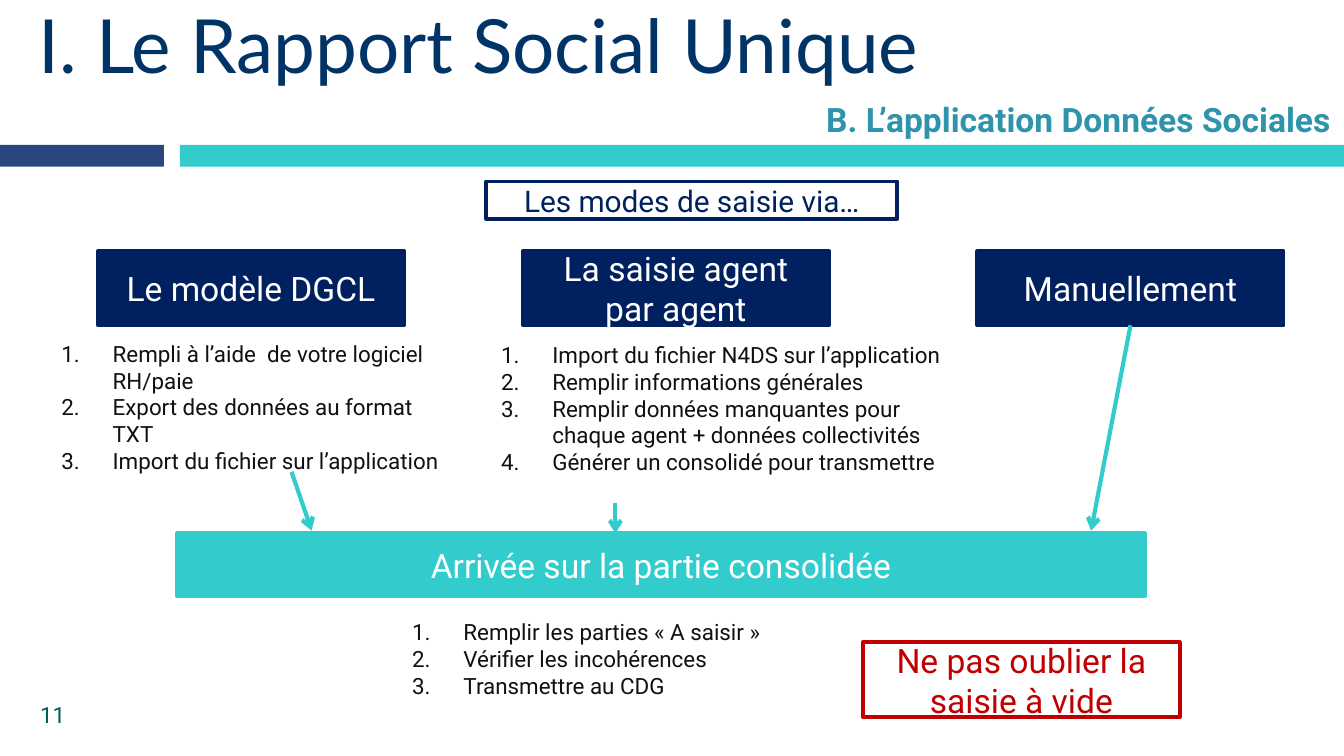
from lxml.etree import SubElement
from pptx import Presentation
from pptx.dml.color import RGBColor
from pptx.enum.shapes import MSO_CONNECTOR as Connector, MSO_SHAPE as Shape
from pptx.enum.text import MSO_ANCHOR as Anchor, MSO_AUTO_SIZE as AutoSize, PP_ALIGN as Align
from pptx.oxml.ns import qn
from pptx.util import Cm, Pt

COLORS = {
    "navy": "002060", "turquoise": "33CCCC", "slate": "2A467E", "title": "003366",
    "subtitle": "2F93AB", "page": "005B59", "ink": "111111", "red": "C00000", "white": "FFFFFF",
}
LIST_INDENT = 0.97
TITLE_INDENT = 1.24


def color(name):
    return RGBColor.from_string(COLORS[name])


class SlideBuilder:
    def __init__(self, slide, font="Roboto"):
        self.slide = slide
        self.font = font

    def set_text(self, frame, lines, ink, size, align=Align.LEFT, anchor=Anchor.MIDDLE,
                 indent=0, numbered=False, grow=False, **font_format):
        """Fill a text frame; a numbered text hangs its numbers in the indent."""
        frame_format = {"word_wrap": True, "vertical_anchor": anchor,
                        "auto_size": AutoSize.SHAPE_TO_FIT_TEXT if grow else AutoSize.NONE}
        for name, value in frame_format.items():
            setattr(frame, name, value)
        for number, line in enumerate(lines):
            paragraph = frame.add_paragraph() if number else frame.paragraphs[0]
            paragraph.text = line
            paragraph.alignment = align
            properties = paragraph._p.get_or_add_pPr()
            properties.set("marL", str(Cm(indent)))
            if numbered:
                properties.set("indent", str(-Cm(indent)))
                SubElement(properties, qn("a:buFont"), typeface="+mj-lt")
                SubElement(properties, qn("a:buAutoNum"), type="arabicPeriod")
            run_format = {"name": self.font, "size": Pt(size), **font_format}
            for run in paragraph.runs:
                for name, value in run_format.items():
                    setattr(run.font, name, value)
                run.font.color.rgb = color(ink)

    def text(self, place, lines, ink, size, **text_format):
        box = self.slide.shapes.add_textbox(*map(Cm, place))
        self.set_text(box.text_frame, lines, ink, size, **text_format)

    def numbered_list(self, place, steps):
        self.text(place, steps, "ink", 12, anchor=Anchor.TOP,
                  indent=LIST_INDENT, numbered=True, grow=True)

    def box(self, place, fill=None, outline=None, label=None, ink="white", size=18):
        shape = self.slide.shapes.add_shape(Shape.RECTANGLE, *map(Cm, place))
        shape.shadow.inherit = False
        if fill:
            shape.fill.solid()
            shape.fill.fore_color.rgb = color(fill)
        else:
            shape.fill.background()
        if outline:
            shape.line.color.rgb = color(outline)
            shape.line.width = Pt(2)
        else:
            shape.line.fill.background()
        if label:
            self.set_text(shape.text_frame, [label], ink, size, align=Align.CENTER)
        return shape

    def arrow(self, start, end):
        connector = self.slide.shapes.add_connector(Connector.STRAIGHT, *map(Cm, start + end))
        connector.line.color.rgb = color("turquoise")
        connector.line.width = Pt(2.25)
        properties = connector._element.spPr
        SubElement(properties.find(qn("a:ln")), qn("a:tailEnd"), type="arrow")
        SubElement(properties, qn("a:effectLst"))
        return connector


def main():
    deck = Presentation()
    deck.slide_width, deck.slide_height = Cm(25.4), Cm(14.29)
    page = SlideBuilder(deck.slides.add_slide(deck.slide_layouts[6]))

    page.box((3.4, 2.74, 22, 0.41), "turquoise")
    page.box((0, 2.74, 3.1, 0.41), "slate")
    page.text((0.51, 13.13, 5.92, 0.76), ["11"], "page", 12)
    page.text((-0.76, -0.25, 22.4, 2.16), ["I. Le Rapport Social Unique"], "title", 40,
              indent=TITLE_INDENT, name="Lato")
    page.text((12.6, 1.75, 12.8, 1.02), ["B. L’application Données Sociales"], "subtitle", 18,
              align=Align.RIGHT, anchor=Anchor.TOP, grow=True, bold=True)

    page.box((9.19, 3.43, 7.77, 0.71), None, "navy", "Les modes de saisie via…", "navy", 16)
    entry_modes = {"Le modèle DGCL": 1.85, "La saisie agent par agent": 9.88, "Manuellement": 18.47}
    mode_boxes = {mode: page.box((left, 4.75, 5.79, 1.4), "navy", "navy", mode)
                  for mode, left in entry_modes.items()}

    page.numbered_list((0.91, 6.3, 7.8, 2.82), [
        "Rempli à l’aide  de votre logiciel RH/paie",
        "Export des données au format TXT",
        "Import du fichier sur l’application",
    ])
    page.numbered_list((9.22, 6.32, 8.86, 2.82), [
        "Import du fichier N4DS sur l’application",
        "Remplir informations générales",
        "Remplir données manquantes pour chaque agent + données collectivités",
        "Générer un consolidé pour transmettre",
    ])

    page.box((3.35, 10.08, 18.29, 1.19), "turquoise", "turquoise",
             "Arrivée sur la partie consolidée")
    page.numbered_list((7.54, 11.56, 7.44, 1.8), [
        "Remplir les parties « A saisir »",
        "Vérifier les incohérences",
        "Transmettre au CDG",
    ])

    manual_arrow = page.arrow((21.36, 6.15), (20.62, 10.03))
    manual_arrow.begin_connect(mode_boxes["Manuellement"], 2)
    page.arrow((11.63, 9.5), (11.63, 10.08))
    page.arrow((5.51, 8.92), (5.89, 10.03))
    page.box((16.31, 12.14, 5.99, 1.42), "white", "red", "Ne pas oublier la saisie à vide", "red")

    deck.save("out.pptx")


if __name__ == "__main__":
    main()
